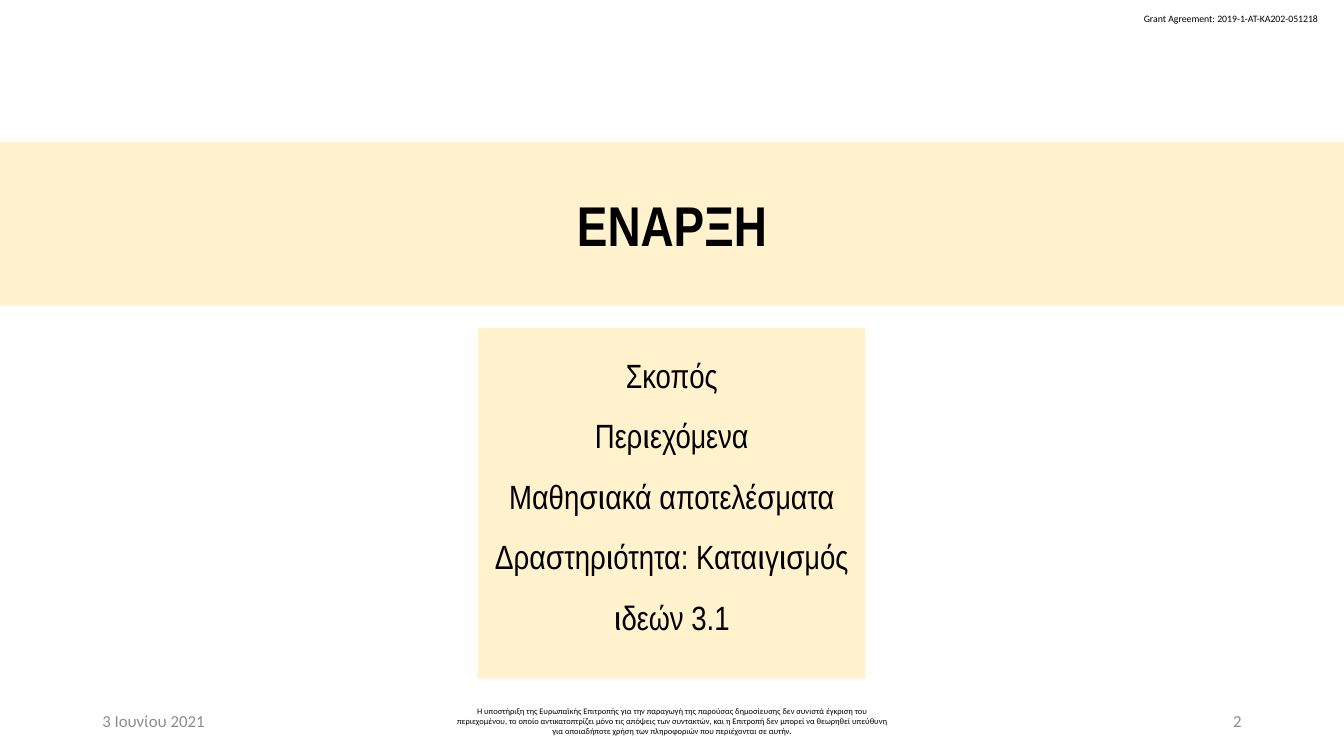
from dataclasses import dataclass

from pptx import Presentation
from pptx.dml.color import RGBColor
from pptx.enum.shapes import MSO_SHAPE
from pptx.enum.text import MSO_ANCHOR, PP_ALIGN
from pptx.util import Pt


@dataclass(frozen=True)
class Theme:
    band: RGBColor = RGBColor(0xFF, 0xF2, 0xCC)
    ink: RGBColor = RGBColor(0, 0, 0)
    muted: RGBColor = RGBColor(0x8C, 0x8C, 0x8C)
    heading_font: str = "Arial Narrow"
    small_font: str = "Calibri"
    title_size: float = 40
    topic_size: float = 24
    footer_size: float = 12
    grant_size: float = 7
    disclaimer_size: float = 6


class SlideBuilder:
    """Draws labels and filled panels on one slide in a shared theme."""

    def __init__(self, slide, theme):
        self.slide = slide
        self.theme = theme

    def set_text(self, frame, lines, font, size, color, align, bold=False, spacing=None):
        frame.text = "\n".join(lines)
        for para in frame.paragraphs:
            para.alignment = align
            para.line_spacing = spacing
            for span in para.runs:
                span.font.name = font
                span.font.size = Pt(size)
                span.font.bold = bold
                span.font.color.rgb = color

    def label(self, area, text, size, color, align=PP_ALIGN.LEFT, wrap=True, anchor=MSO_ANCHOR.MIDDLE):
        box = self.slide.shapes.add_textbox(*map(Pt, area))
        frame = box.text_frame
        frame.word_wrap = wrap
        frame.vertical_anchor = anchor
        self.set_text(frame, [text], self.theme.small_font, size, color, align)

    def panel(self, area, lines, size, anchor, bold=False, spacing=None):
        box = self.slide.shapes.add_shape(MSO_SHAPE.RECTANGLE, *map(Pt, area))
        box.shadow.inherit = False
        box.fill.solid()
        box.fill.fore_color.rgb = self.theme.band
        box.line.fill.background()
        frame = box.text_frame
        frame.word_wrap = True
        frame.vertical_anchor = anchor
        frame.margin_left = frame.margin_right = Pt(9.6)
        frame.margin_top = frame.margin_bottom = Pt(4.8)
        self.set_text(frame, lines, self.theme.heading_font, size, self.theme.ink,
                      PP_ALIGN.CENTER, bold, spacing)


def main():
    theme = Theme()
    deck = Presentation()
    deck.slide_width, deck.slide_height = Pt(960), Pt(540)
    page = SlideBuilder(deck.slides.add_slide(deck.slide_layouts[6]), theme)

    page.label((810, 5.6, 141.8, 15.8), "Grant Agreement: 2019-1-AT-KA202-051218",
               theme.grant_size, theme.ink, wrap=False, anchor=MSO_ANCHOR.TOP)

    footer_top, footer_height = 500.5, 28.75
    page.label((66, footer_top, 216, footer_height), "3 Ιουνίου 2021",
               theme.footer_size, theme.muted)
    page.label((318, footer_top, 324, footer_height),
               "Η υποστήριξη της Ευρωπαϊκής Επιτροπής για την παραγωγή της παρούσας "
               "δημοσίευσης δεν συνιστά έγκριση του περιεχομένου, το οποίο αντικατοπτρίζει "
               "μόνο τις απόψεις των συντακτών, και η Επιτροπή δεν μπορεί να θεωρηθεί "
               "υπεύθυνη για οποιαδήποτε χρήση των πληροφοριών που περιέχονται σε αυτήν.",
               theme.disclaimer_size, theme.ink, PP_ALIGN.CENTER)
    page.label((678, footer_top, 216, footer_height), "2",
               theme.footer_size, theme.muted, PP_ALIGN.RIGHT)

    page.panel((0, 101.4, 960, 117), ["ΕΝΑΡΞΗ"], theme.title_size,
               MSO_ANCHOR.MIDDLE, bold=True)
    topics = [
        "Σκοπός",
        "Περιεχόμενα",
        "Μαθησιακά αποτελέσματα",
        "Δραστηριότητα: Καταιγισμός ιδεών 3.1",
    ]
    page.panel((341.4, 234.2, 276.8, 250.5), topics, theme.topic_size,
               MSO_ANCHOR.TOP, spacing=1.5)
    deck.save("out.pptx")


if __name__ == "__main__":
    main()
